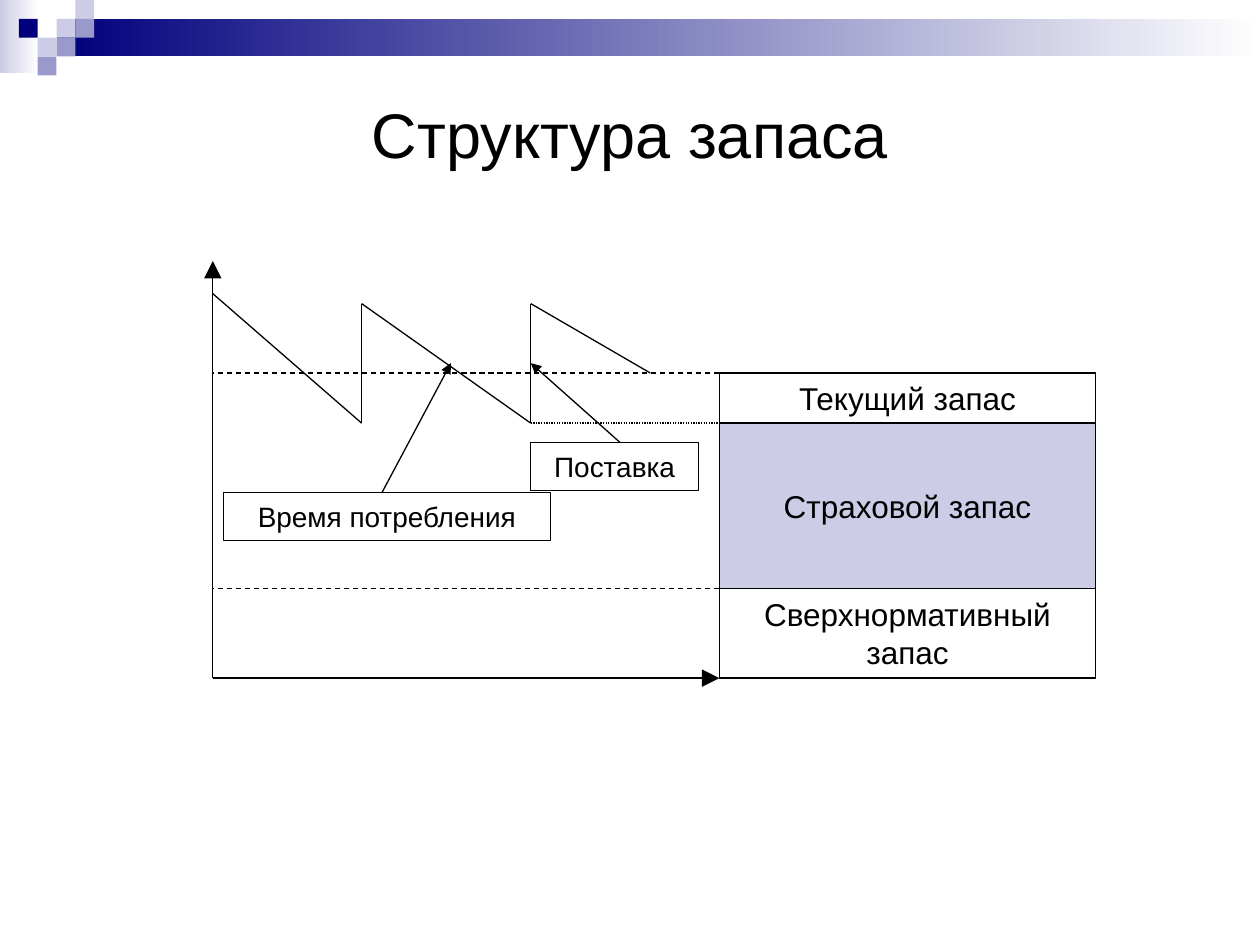
from itertools import pairwise
from pptx import Presentation
from pptx.dml.color import RGBColor
from pptx.enum.dml import MSO_LINE
from pptx.enum.shapes import MSO_CONNECTOR, MSO_SHAPE
from pptx.enum.text import MSO_ANCHOR, PP_ALIGN
from pptx.oxml.ns import qn
from pptx.util import Cm, Pt
from lxml.etree import SubElement

BLACK, NAVY, LILAC, PALE, WHITE = "000000", "00007D", "9999CC", "CCCCE6", "FFFFFF"

# Levels and edges of the diagram, in cm
LEFT, RIGHT, WIDE = 4.29, 14.5, 7.59
TOP, SAFE, OVER, BASE = 7.52, 8.53, 11.86, 13.67
PEAK, UNIT = 6.12, 0.38


def color(code):
    return RGBColor.from_string(code)


def style(frame, text, size):
    frame.text = text
    frame.word_wrap = True
    frame.vertical_anchor = MSO_ANCHOR.MIDDLE
    para = frame.paragraphs[0]
    para.alignment = PP_ALIGN.CENTER
    font = para.runs[0].font
    font.name, font.size = "Arial", Pt(size)
    font.color.rgb = color(BLACK)


def rect(slide, x, y, w, h, fill=None, edge=None):
    """Draw a rectangle; a pair of fill colours makes a gradient."""
    box = slide.shapes.add_shape(MSO_SHAPE.RECTANGLE, Cm(x), Cm(y), Cm(w), Cm(h))
    box.shadow.inherit = False
    if fill is None:
        box.fill.background()
    elif isinstance(fill, tuple):
        box.fill.gradient()
        box.fill.gradient_angle = 0
        for stop, code in zip(box.fill.gradient_stops, fill):
            stop.color.rgb = color(code)
    else:
        box.fill.solid()
        box.fill.fore_color.rgb = color(fill)
    if edge:
        box.line.color.rgb = color(edge)
        box.line.width = Pt(0.75)
    else:
        box.line.fill.background()
    return box


def label(slide, text, x, y, w, h, size, fill=None):
    style(rect(slide, x, y, w, h, fill, BLACK).text_frame, text, size)


def line(slide, start, end, dash=None, arrow=None):
    """Draw a line; arrow is the size of its head, "med" or "lg"."""
    points = [Cm(v) for v in (*start, *end)]
    link = slide.shapes.add_connector(MSO_CONNECTOR.STRAIGHT, *points)
    link.line.color.rgb = color(BLACK)
    link.line.width = Pt(0.75)
    if dash:
        link.line.dash_style = dash
    if arrow:
        SubElement(link.line._get_or_add_ln(), qn("a:tailEnd"),
                   type="triangle", w=arrow, len=arrow)
    SubElement(link._element.spPr, qn("a:effectLst"))


def banner(slide):
    rect(slide, 0, 0, 0.79, 1.47, (PALE, WHITE))
    rect(slide, 3 * UNIT, UNIT, 25.4 - 3 * UNIT, 2 * UNIT, (NAVY, WHITE))
    # Small squares by column and row
    for col, row, fill in ((3, 1, PALE), (4, 0, PALE), (4, 1, LILAC), (2, 2, PALE),
                           (1, 1, NAVY), (3, 2, LILAC), (2, 3, LILAC)):
        rect(slide, col * UNIT, row * UNIT, UNIT, UNIT, fill)


def title(slide, text):
    head = slide.shapes.title
    head.left, head.top, head.width, head.height = Cm(1.27), Cm(1.27), Cm(22.86), Cm(2.84)
    style(head.text_frame, text, 36)


def stock(slide):
    """Draw the stacked parts of the stock."""
    for text, y, end, fill in (("Текущий запас", TOP, SAFE, None),
                               ("Страховой запас", SAFE, OVER, PALE),
                               ("Сверхнормативный запас", OVER, BASE, None)):
        label(slide, text, RIGHT, y, WIDE, end - y, 18, fill)
    rect(slide, RIGHT, TOP, WIDE, BASE - TOP, edge=BLACK)


def graph(slide):
    # Axes
    line(slide, (LEFT, BASE), (LEFT, 5.26), arrow="lg")
    line(slide, (LEFT, BASE), (RIGHT, BASE), arrow="lg")
    # Level lines
    for y in (TOP, OVER):
        line(slide, (RIGHT, y), (LEFT, y), MSO_LINE.DASH)
    line(slide, (10.7, SAFE), (RIGHT, SAFE), MSO_LINE.ROUND_DOT)
    # Use and refill of the stock
    saw = ((LEFT, 5.92), (7.29, SAFE), (7.29, PEAK), (10.7, SAFE),
           (10.7, PEAK), (13.11, TOP))
    for start, end in pairwise(saw):
        line(slide, start, end)


def notes(slide):
    """Draw the captions and their pointers."""
    label(slide, "Поставка", 10.69, 8.92, 3.4, 0.97, 16)
    label(slide, "Время потребления", 4.5, 9.93, 6.6, 0.97, 16)
    line(slide, (12.5, 8.92), (10.7, 7.32), arrow="med")
    line(slide, (7.7, 9.93), (9.09, 7.32), arrow="med")


def main():
    deck = Presentation()
    deck.slide_width, deck.slide_height = Cm(25.4), Cm(19.05)
    slide = deck.slides.add_slide(deck.slide_layouts[5])
    banner(slide)
    title(slide, "Структура запаса")
    stock(slide)
    graph(slide)
    notes(slide)
    deck.save("out.pptx")


if __name__ == "__main__":
    main()
